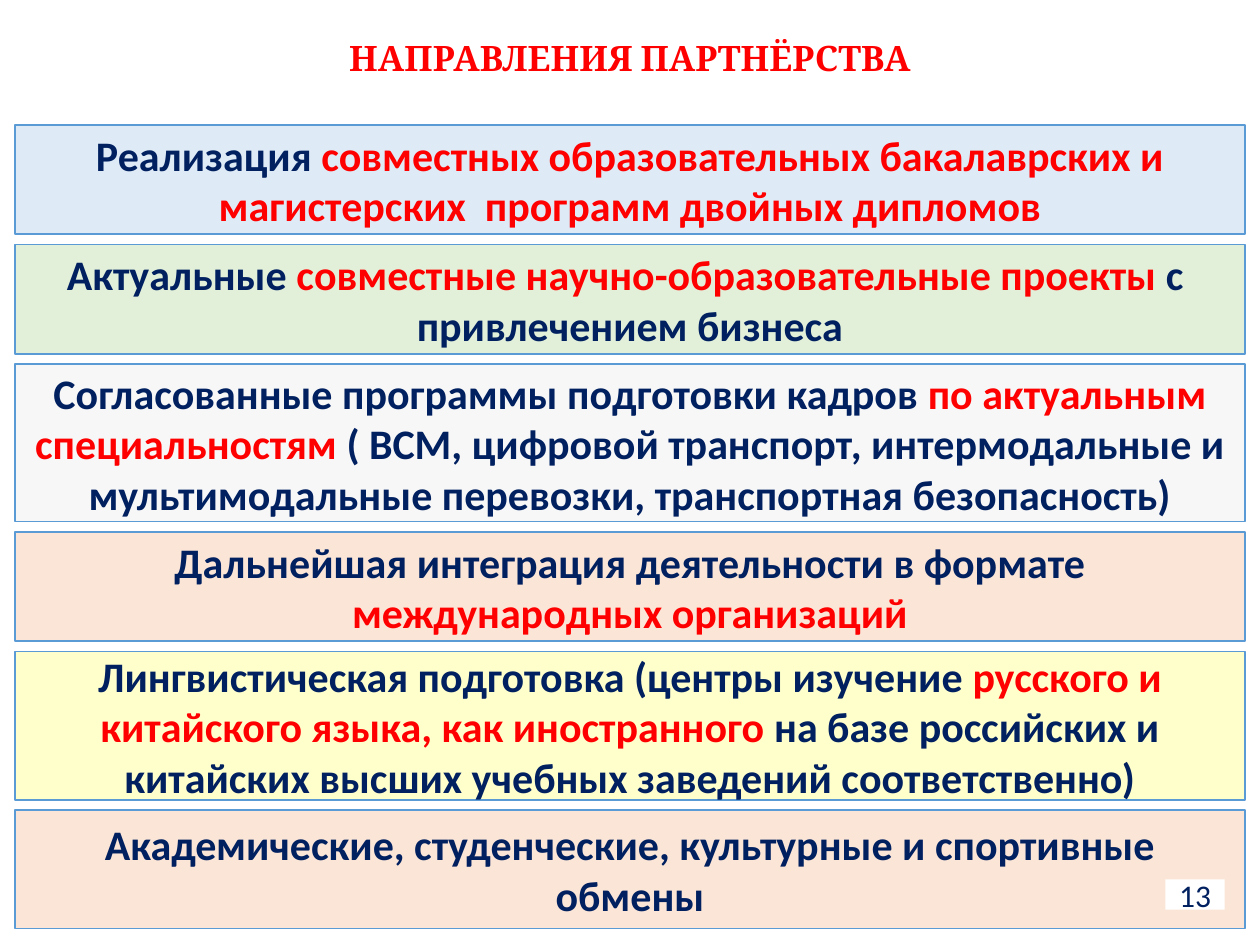
import dataclasses
import pptx
import pptx.dml.color
import pptx.enum.shapes
import pptx.enum.text
import pptx.util

Inches = pptx.util.Inches


@dataclasses.dataclass(frozen=True)
class Theme:
    # Colours
    white: str = "FFFFFF"
    red: str = "FF0000"
    navy: str = "002060"
    edge: str = "5B9BD5"
    blue: str = "DEEBF7"
    green: str = "E2F0D9"
    grey: str = "F7F7F7"
    peach: str = "FBE5D6"
    cream: str = "FFFFCC"
    # Fonts and sizes
    head: str = "Cambria"
    body: str = "Calibri"
    title: int = 20
    text: int = 24
    page: int = 18


THEME = Theme()
LEFT, WIDTH = 0.12, 9.76
TOP, GAP = 0.99, 0.08

# Height, fill, then text parts that alternate between navy and red
BANDS = [
    (0.87, THEME.blue, ["Реализация ",
     "совместных образовательных бакалаврских и магистерских  программ двойных дипломов"]),
    (0.87, THEME.green, ["Актуальные ", "совместные научно-образовательные проекты ",
     "с  привлечением бизнеса"]),
    (1.25, THEME.grey, ["Согласованные программы подготовки кадров ",
     "по актуальным специальностям ",
     "( ВСМ, цифровой транспорт, интермодальные и мультимодальные перевозки, "
     "транспортная безопасность)"]),
    (0.87, THEME.peach, ["Дальнейшая интеграция деятельности в формате ",
     "международных организаций"]),
    (1.18, THEME.cream, ["Лингвистическая подготовка (центры изучение ",
     "русского и китайского языка, как иностранного ",
     "на базе российских и китайских высших учебных заведений соответственно)"]),
    (0.94, THEME.peach, ["Академические, студенческие, культурные и спортивные обмены"]),
]


def rgb(code):
    return pptx.dml.color.RGBColor.from_string(code)


def paint(shape, fill):
    shape.fill.solid()
    shape.fill.fore_color.rgb = rgb(fill)


def write(shape, parts, font, size, tones, bold=True):
    """Write centred text; the parts take the tones in turn."""
    frame = shape.text_frame
    frame.word_wrap = True
    frame.auto_size = pptx.enum.text.MSO_AUTO_SIZE.NONE
    frame.vertical_anchor = pptx.enum.text.MSO_ANCHOR.MIDDLE
    para = frame.paragraphs[0]
    para.alignment = pptx.enum.text.PP_ALIGN.CENTER
    for i, part in enumerate(parts):
        run = para.add_run()
        run.text = part
        run.font.name = font
        run.font.size = pptx.util.Pt(size)
        run.font.bold = bold
        run.font.color.rgb = rgb(tones[i % len(tones)])


def add_box(slide, box, fill, edge=None):
    shape = slide.shapes.add_shape(
        pptx.enum.shapes.MSO_SHAPE.RECTANGLE, *map(Inches, box))
    shape.shadow.inherit = False
    paint(shape, fill)
    if edge:
        shape.line.color.rgb = rgb(edge)
        shape.line.width = pptx.util.Pt(1)
    else:
        shape.line.fill.background()
    return shape


def add_title(slide, box):
    title = slide.shapes.title
    title.left, title.top, title.width, title.height = map(Inches, box)
    paint(title, THEME.white)
    write(title, ["НАПРАВЛЕНИЯ ПАРТНЁРСТВА"], THEME.head, THEME.title, [THEME.red])


def add_bands(slide, left, top, width):
    for height, fill, parts in BANDS:
        band = add_box(slide, (left, top, width, height), fill, THEME.edge)
        write(band, parts, THEME.body, THEME.text, [THEME.navy, THEME.red])
        top += height + GAP


def add_page(slide, box):
    page = add_box(slide, box, THEME.white)
    write(page, ["13"], THEME.body, THEME.page, [THEME.navy], bold=False)


def main():
    deck = pptx.Presentation()
    deck.slide_width, deck.slide_height = Inches(10), Inches(7.5)
    slide = deck.slides.add_slide(deck.slide_layouts.get_by_name("Title Only"))
    # Heading, stacked bands, page number
    add_title(slide, (LEFT, 0.05, WIDTH, 0.81))
    add_bands(slide, LEFT, TOP, WIDTH)
    add_page(slide, (9.25, 6.98, 0.47, 0.24))
    deck.save("out.pptx")


if __name__ == "__main__":
    main()
